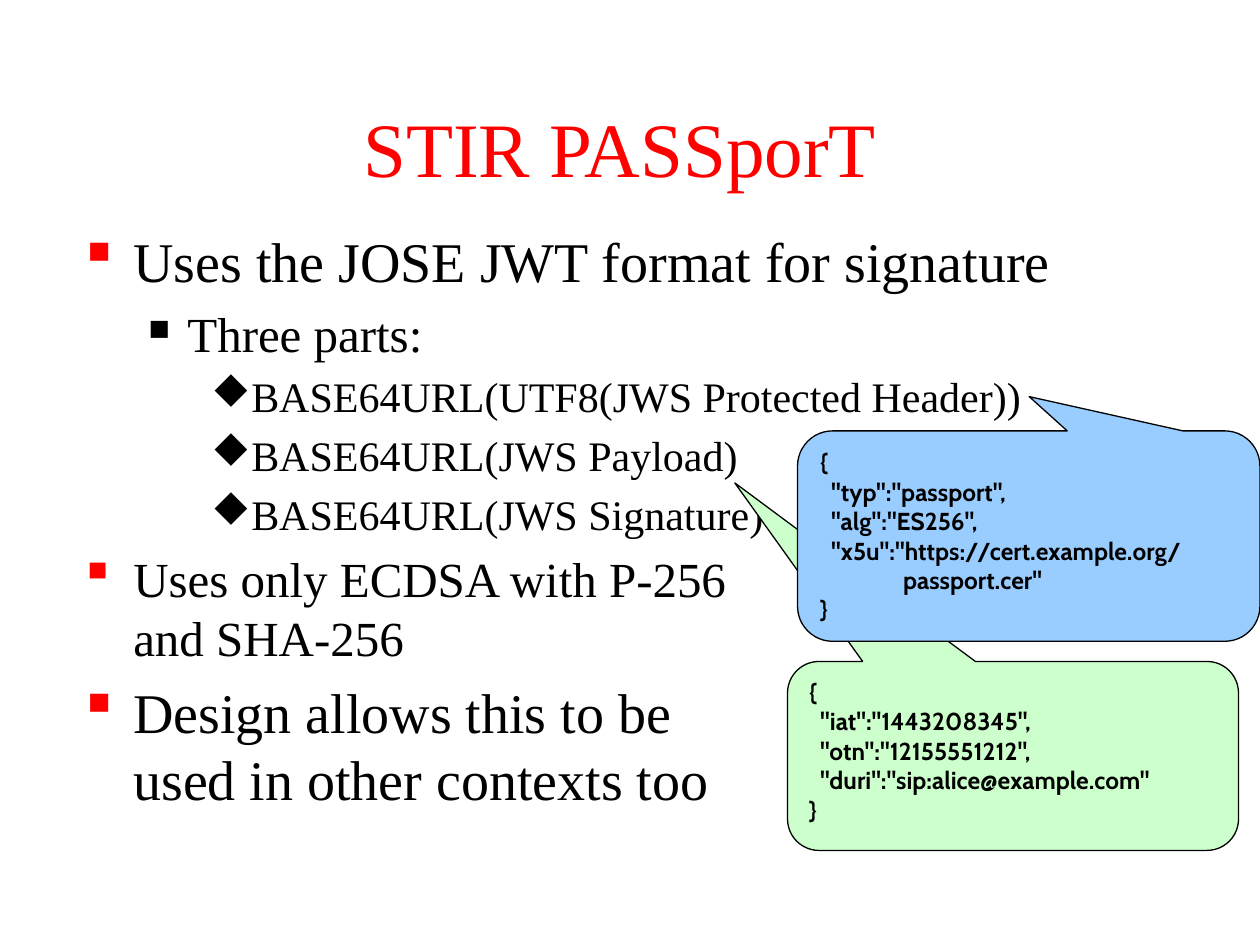
from dataclasses import dataclass

import lxml.etree
import pptx
import pptx.dml.color
import pptx.enum.shapes
import pptx.enum.text
import pptx.oxml.ns
import pptx.util
from pptx.util import Inches


@dataclass(frozen=True)
class Theme:
    """Colours, fonts and type sizes of the slide."""

    accent: str = "FF0000"
    ink: str = "000000"
    header_fill: str = "99CCFF"
    payload_fill: str = "CCFFCC"
    text_font: str = "Times New Roman"
    code_font: str = "Cabin"
    bullet_font: str = "Wingdings"
    title_size: int = 44
    large_size: int = 32
    medium_size: int = 28
    small_size: int = 24
    code_size: int = 14


@dataclass(frozen=True)
class BulletStyle:
    """Symbol font character, colour, percent size and indents in inches."""

    character: str
    color: str
    percent: int
    margin: float
    hanging: float


THEME = Theme()
MAIN = BulletStyle("§", THEME.accent, 110, 0.38, 0.38)
SUB = BulletStyle("n", THEME.ink, 60, 0.81, 0.31)
DETAIL = BulletStyle("u", THEME.ink, 95, 1.25, 0.25)

POINTS = [
    (0, MAIN, THEME.large_size, "Uses the JOSE JWT format for signature"),
    (1, SUB, THEME.medium_size, "Three parts:"),
    (2, DETAIL, THEME.small_size, "BASE64URL(UTF8(JWS Protected Header))"),
    (2, DETAIL, THEME.small_size, "BASE64URL(JWS Payload)"),
    (2, DETAIL, THEME.small_size, "BASE64URL(JWS Signature)"),
    (1, MAIN, THEME.medium_size, "Uses only ECDSA with P-256\vand SHA-256"),
    (0, MAIN, THEME.large_size, "Design allows this to be\vused in other contexts too"),
]

PAYLOAD_CODE = [
    "{",
    '  "iat":"1443208345",',
    '  "otn":"12155551212",',
    '  "duri":"sip:alice@example.com"',
    "}",
]

HEADER_CODE = [
    "{",
    '  "typ":"passport",',
    '  "alg":"ES256",',
    '  "x5u":"https://cert.example.org/',
    '               passport.cer"',
    "}",
]


def rgb(color):
    """Return the colour object for a hex string."""
    return pptx.dml.color.RGBColor.from_string(color)


def set_font(paragraph, name, size, color, bold=False):
    """Set the font of a whole paragraph."""
    font = paragraph.font
    font.name = name
    font.size = pptx.util.Pt(size)
    font.color.rgb = rgb(color)
    font.bold = bold


def set_bullet(paragraph, style):
    """Give a paragraph its bullet and hanging indent."""
    qualify = pptx.oxml.ns.qn
    properties = paragraph._p.get_or_add_pPr()
    properties.set("marL", str(Inches(style.margin)))
    properties.set("indent", str(-Inches(style.hanging)))
    bullet_color = lxml.etree.SubElement(properties, qualify("a:buClr"))
    lxml.etree.SubElement(bullet_color, qualify("a:srgbClr"), val=style.color)
    lxml.etree.SubElement(properties, qualify("a:buSzPct"), val=str(style.percent * 1000))
    lxml.etree.SubElement(
        properties, qualify("a:buFont"), typeface=THEME.bullet_font, charset="2"
    )
    lxml.etree.SubElement(properties, qualify("a:buChar"), char=style.character)


def add_title(slide, box, text):
    """Place the centred title at the bottom of its box."""
    frame = slide.shapes.add_textbox(*map(Inches, box)).text_frame
    frame.word_wrap = True
    frame.vertical_anchor = pptx.enum.text.MSO_ANCHOR.BOTTOM
    paragraph = frame.paragraphs[0]
    paragraph.text = text
    paragraph.alignment = pptx.enum.text.PP_ALIGN.CENTER
    set_font(paragraph, THEME.text_font, THEME.title_size, THEME.accent)


def add_points(slide, box, points):
    """Place the bulleted list in its box."""
    frame = slide.shapes.add_textbox(*map(Inches, box)).text_frame
    frame.word_wrap = True
    for index, (level, style, size, text) in enumerate(points):
        paragraph = frame.add_paragraph() if index else frame.paragraphs[0]
        paragraph.text = text
        paragraph.level = level
        set_bullet(paragraph, style)
        paragraph.space_before = pptx.util.Pt(size / 5 if index else 0)
        set_font(paragraph, THEME.text_font, size, THEME.ink)


def add_callout(slide, box, pointer, fill, lines):
    """Place a rounded callout of code with its pointer offset."""
    shape = slide.shapes.add_shape(
        pptx.enum.shapes.MSO_SHAPE.ROUNDED_RECTANGULAR_CALLOUT, *map(Inches, box)
    )
    shape.shadow.inherit = False
    for index, value in enumerate((*pointer, 0.167)):
        shape.adjustments[index] = value
    shape.fill.solid()
    shape.fill.fore_color.rgb = rgb(fill)
    shape.line.color.rgb = rgb(THEME.ink)
    shape.line.width = pptx.util.Pt(0.75)
    frame = shape.text_frame
    frame.word_wrap = False
    frame.vertical_anchor = pptx.enum.text.MSO_ANCHOR.TOP
    for index, line in enumerate(lines):
        paragraph = frame.add_paragraph() if index else frame.paragraphs[0]
        paragraph.text = line
        paragraph.alignment = pptx.enum.text.PP_ALIGN.LEFT
        set_font(paragraph, THEME.code_font, THEME.code_size, THEME.ink, bold=True)


def main():
    """Build and save the slide."""
    presentation = pptx.Presentation()
    presentation.slide_width = Inches(10)
    presentation.slide_height = Inches(7.5)
    slide = presentation.slides.add_slide(presentation.slide_layouts[6])
    add_title(slide, (0.67, 0.33, 8.5, 1.25), "STIR PASSporT")
    add_points(slide, (0.58, 1.75, 8.83, 4.83), POINTS)
    add_callout(
        slide, (6.25, 5.25, 3.58, 1.5), (-0.617, -1.445), THEME.payload_fill, PAYLOAD_CODE
    )
    add_callout(
        slide, (6.33, 3.42, 3.67, 1.67), (0.001, -0.663), THEME.header_fill, HEADER_CODE
    )
    presentation.save("out.pptx")


if __name__ == "__main__":
    main()
